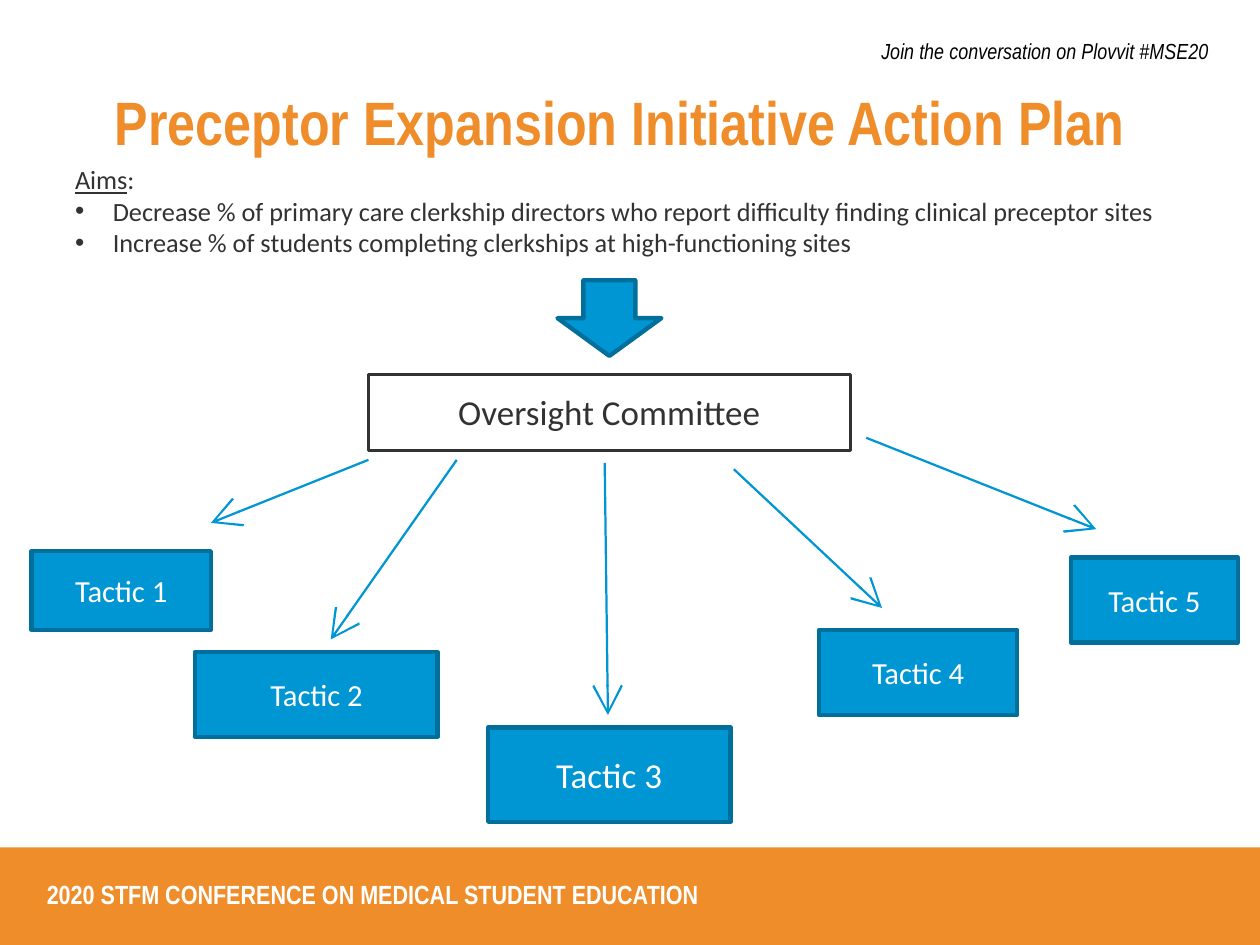
from dataclasses import dataclass

from lxml import etree
from pptx import Presentation
from pptx.dml.color import RGBColor
from pptx.enum.shapes import MSO_CONNECTOR, MSO_SHAPE
from pptx.enum.text import MSO_ANCHOR, MSO_AUTO_SIZE, PP_ALIGN
from pptx.oxml.ns import qn
from pptx.util import Inches, Pt

RECTANGLE = MSO_SHAPE.RECTANGLE
DOWN_ARROW = MSO_SHAPE.DOWN_ARROW
STRAIGHT = MSO_CONNECTOR.STRAIGHT
LEFT, CENTER, RIGHT = PP_ALIGN.LEFT, PP_ALIGN.CENTER, PP_ALIGN.RIGHT
TOP, MIDDLE = MSO_ANCHOR.TOP, MSO_ANCHOR.MIDDLE
NO_AUTOFIT = MSO_AUTO_SIZE.NONE
TITLE_ONLY = 5


@dataclass(frozen=True)
class Theme:
    orange: RGBColor = RGBColor(0xEF, 0x8D, 0x2B)
    blue: RGBColor = RGBColor(0x00, 0x96, 0xD3)
    dark_blue: RGBColor = RGBColor(0x00, 0x6F, 0x9C)
    ink: RGBColor = RGBColor(0x32, 0x32, 0x32)
    black: RGBColor = RGBColor(0, 0, 0)
    white: RGBColor = RGBColor(0xFF, 0xFF, 0xFF)
    heading_font: str = "Arial Narrow"
    body_font: str = "Calibri"
    title_size: float = 14
    large_size: float = 8
    tactic_size: float = 7
    body_size: float = 6
    note_size: float = 5


THEME = Theme()

AIMS = [
    "Decrease % of primary care clerkship directors who report difficulty finding clinical preceptor sites",
    "Increase % of students completing clerkships at high-functioning sites",
]

TACTICS = [
    ((0.1, 1.75, 0.57, 0.25), THEME.tactic_size, (1.17, 1.46), (0.67, 1.66)),
    ((0.62, 2.07, 0.77, 0.27), THEME.tactic_size, (1.45, 1.46), (1.05, 2.03)),
    ((1.55, 2.31, 0.77, 0.3), THEME.large_size, (1.92, 1.47), (1.93, 2.27)),
    ((2.6, 2, 0.63, 0.27), THEME.tactic_size, (2.33, 1.49), (2.8, 1.93)),
    ((3.4, 1.77, 0.53, 0.27), THEME.tactic_size, (2.75, 1.39), (3.48, 1.68)),
]


def inches(lengths):
    return [Inches(length) for length in lengths]


def add_run(paragraph, text, size, color, font=THEME.body_font,
            bold=False, italic=False, underline=False):
    run = paragraph.add_run()
    run.text = text
    run.font.size = Pt(size)
    run.font.name = font
    run.font.color.rgb = color
    run.font.bold = bold
    run.font.italic = italic
    run.font.underline = underline


def prepare_frame(holder, align=LEFT, anchor=TOP):
    frame = holder.text_frame
    frame.word_wrap = True
    frame.auto_size = NO_AUTOFIT
    frame.vertical_anchor = anchor
    paragraph = frame.paragraphs[0]
    paragraph.alignment = align
    return paragraph


def add_text(slide, box, align=LEFT):
    holder = slide.shapes.add_textbox(*inches(box))
    return holder, prepare_frame(holder, align)


def add_block(slide, kind, box, fill=None, line=None, line_width=1):
    block = slide.shapes.add_shape(kind, *inches(box))
    block.shadow.inherit = False
    if fill is None:
        block.fill.background()
    else:
        block.fill.solid()
        block.fill.fore_color.rgb = fill
    if line is None:
        block.line.fill.background()
    else:
        block.line.color.rgb = line
        block.line.width = Pt(line_width)
    return block


def add_arrow(slide, start, end):
    arrow = slide.shapes.add_connector(STRAIGHT, *inches(start + end))
    arrow.line.color.rgb = THEME.blue
    arrow.line.width = Pt(0.5)
    etree.SubElement(arrow.line._get_or_add_ln(), qn("a:tailEnd"), type="arrow")
    etree.SubElement(arrow._element.spPr, qn("a:effectLst"))


def add_bullet(frame, text):
    paragraph = frame.add_paragraph()
    properties = paragraph._p.get_or_add_pPr()
    properties.set("marL", str(Inches(0.12)))
    properties.set("indent", str(Inches(-0.12)))
    etree.SubElement(properties, qn("a:buFont"), typeface="Arial")
    etree.SubElement(properties, qn("a:buChar"), char="•")
    add_run(paragraph, text, THEME.body_size, THEME.ink)


def add_banners(slide):
    add_block(slide, RECTANGLE, (0, 2.69, 4, 0.31), THEME.orange)
    _, conference = add_text(slide, (0.05, 2.75, 3.29, 0.26))
    conference.line_spacing = 0.9
    add_run(conference, "2020 STFM CONFERENCE ON MEDICAL STUDENT EDUCATION",
            THEME.body_size, THEME.white, THEME.heading_font, bold=True)
    _, invitation = add_text(slide, (0, 0.07, 3.94, 0.19), RIGHT)
    add_run(invitation, "Join the conversation on Plovvit #MSE20",
            THEME.note_size, THEME.black, THEME.heading_font, italic=True)


def add_title(slide):
    title = slide.shapes.title
    title.left, title.top, title.width, title.height = inches((-0.03, 0.23, 4, 0.34))
    heading = prepare_frame(title, CENTER, MIDDLE)
    heading.line_spacing = 0.9
    add_run(heading, "Preceptor Expansion Initiative Action Plan",
            THEME.title_size, THEME.orange, THEME.heading_font, bold=True)


def add_aims(slide):
    aims, lead = add_text(slide, (0.14, 0.47, 3.66, 0.4))
    add_run(lead, "Aims", THEME.body_size, THEME.ink, underline=True)
    add_run(lead, ":", THEME.body_size, THEME.ink)
    for aim in AIMS:
        add_bullet(aims.text_frame, aim)


def add_committee(slide):
    add_block(slide, DOWN_ARROW, (1.77, 0.89, 0.33, 0.24), THEME.blue, THEME.dark_blue)
    committee = add_block(slide, RECTANGLE, (1.17, 1.19, 1.53, 0.24),
                          line=THEME.ink, line_width=0.75)
    add_run(prepare_frame(committee, CENTER), "Oversight Committee",
            THEME.large_size, THEME.ink)


def add_tactics(slide):
    for number, (box, size, start, end) in enumerate(TACTICS, 1):
        add_arrow(slide, start, end)
        tactic = add_block(slide, RECTANGLE, box, THEME.blue, THEME.dark_blue)
        add_run(prepare_frame(tactic, CENTER, MIDDLE), f"Tactic {number}",
                size, THEME.white)


def main():
    deck = Presentation()
    deck.slide_width, deck.slide_height = Inches(4), Inches(3)
    slide = deck.slides.add_slide(deck.slide_layouts[TITLE_ONLY])
    add_banners(slide)
    add_title(slide)
    add_aims(slide)
    add_committee(slide)
    add_tactics(slide)
    deck.save("out.pptx")


if __name__ == "__main__":
    main()
